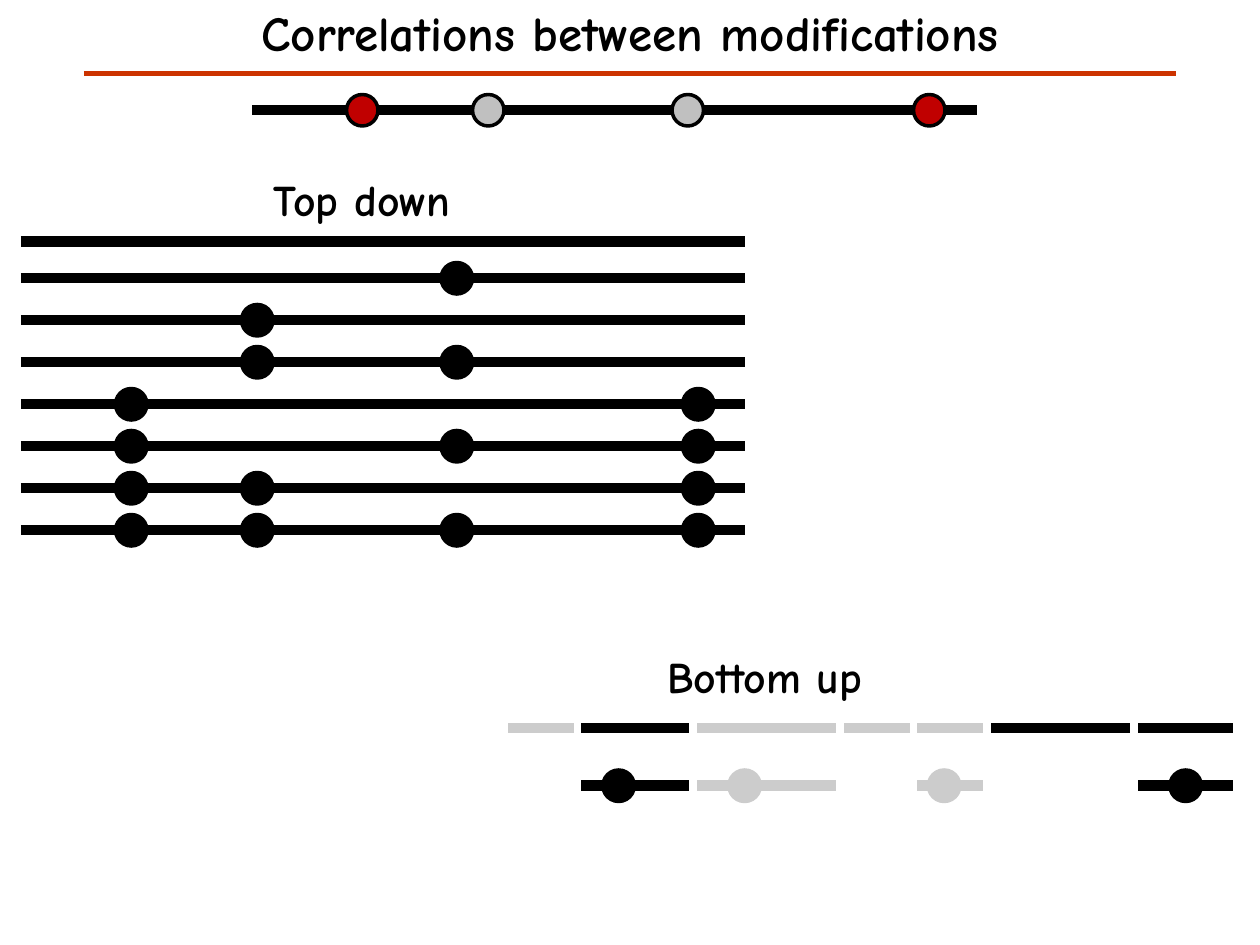
from itertools import product

from lxml import etree
from pptx import Presentation
from pptx.dml.color import RGBColor
from pptx.enum.shapes import MSO_CONNECTOR, MSO_SHAPE
from pptx.enum.text import MSO_ANCHOR, PP_ALIGN
from pptx.oxml.ns import qn
from pptx.util import Pt

LINE = MSO_CONNECTOR.STRAIGHT
OVAL, RECT = MSO_SHAPE.OVAL, MSO_SHAPE.RECTANGLE
MIDDLE, CENTER = MSO_ANCHOR.MIDDLE, PP_ALIGN.CENTER

COLORS = {"black": "000000", "white": "FFFFFF", "rule": "CC3300",
          "red": "C00000", "gray": "C0C0C0"}
FONT = "Comic Neue"
STRAND = 414                 # length of a protein strand
SITES = (63, 135, 249, 387)  # modification sites along a strand
DOT = 18


def rgb(name):
    return RGBColor.from_string(COLORS[name])


def add_line(shapes, x1, y1, x2, y2, color, width):
    line = shapes.add_connector(LINE, Pt(x1), Pt(y1), Pt(x2), Pt(y2))
    line.line.color.rgb = rgb(color)
    line.line.width = Pt(width)
    etree.SubElement(line._element.spPr, qn("a:effectLst"))


def add_shape(shapes, kind, x, y, w, h, fill, outline, opacity=100):
    sp = shapes.add_shape(kind, Pt(x), Pt(y), Pt(w), Pt(h))
    sp.shadow.inherit = False
    sp.fill.solid()
    sp.fill.fore_color.rgb = rgb(fill)
    sp.line.color.rgb = rgb(outline)
    sp.line.width = Pt(2)
    if opacity < 100:
        color = sp._element.spPr.find(qn("a:solidFill"))[0]
        etree.SubElement(color, qn("a:alpha"), val=str(opacity * 1000))


def add_label(shapes, text, x, y, w, h, size):
    tf = shapes.add_textbox(Pt(x), Pt(y), Pt(w), Pt(h)).text_frame
    tf.word_wrap = True
    tf.vertical_anchor = MIDDLE
    p = tf.paragraphs[0]
    p.alignment = CENTER
    r = p.add_run()
    r.text = text
    r.font.name, r.font.size, r.font.bold = FONT, Pt(size), True
    r.font.color.rgb = rgb("black")


def add_strand(shapes, x, y, dots):
    """Strand starting at x, centred on y; dots maps site index to fill."""
    add_line(shapes, x, y, x + STRAND, y, "black", 6)
    for site, fill in dots.items():
        add_shape(shapes, OVAL, x + SITES[site] - DOT / 2, y - DOT / 2,
                  DOT, DOT, fill, "black")


def add_header(shapes, x, y, w):
    add_label(shapes, "Correlations between modifications", x, y, w, 36, 28)
    add_line(shapes, x + 12, y + 42, x + w - 12, y + 42, "rule", 2.5)
    add_strand(shapes, x + 108, y + 63,
               {0: "red", 1: "gray", 2: "gray", 3: "red"})


def add_top_down(shapes, x, y):
    group = shapes.add_group_shape().shapes
    add_label(group, "Top down", x + 90, y, 210, 36, 25)
    # The outer sites occur together, the inner ones independently
    states = product(((), (0, 3)), ((), (1,)), ((), (2,)))
    for i, (outer, second, third) in enumerate(states):
        row_y = y + 39 + 24 * i if i else y + 42
        add_strand(group, x, row_y,
                   {site: "black" for site in outer + second + third})


def add_bottom_up(shapes, x, y):
    add_label(shapes, "Bottom up", x + 59.5, y, 174, 36, 25)
    add_strand(shapes, x, y + 47.5, {})
    add_strand(shapes, x, y + 80.5, {i: "black" for i in range(len(SITES))})

    # Cuts between the peptides of both strands
    for top, cut in product((37.5, 63.5),
                            (39.5, 105.5, 189.5, 231.5, 273.5, 357.5)):
        add_line(shapes, x + cut, y + top, x + cut, y + top + 22.5,
                 "white", 4.5)

    # Hide peptides without a site, fade those that are not detected
    for left, top, w, h, opacity in (
            (276, 65.5, 83, 28, 100),
            (192.5, 65.5, 37.5, 18.5, 100),
            (105.5, 37.5, 168, 56, 80),
            (-1, 65.5, 37.5, 18.5, 100),
            (-26.5, 33, 66, 56, 80)):
        add_shape(shapes, RECT, x + left, y + top, w, h,
                  "white", "white", opacity)


def main():
    prs = Presentation()
    prs.slide_width, prs.slide_height = Pt(720), Pt(540)
    s = prs.slides.add_slide(prs.slide_layouts[6])
    add_header(s.shapes, 36, 0, 648)
    add_top_down(s.shapes, 12, 96)
    add_bottom_up(s.shapes, 290.5, 368.5)
    prs.save("out.pptx")


if __name__ == "__main__":
    main()
